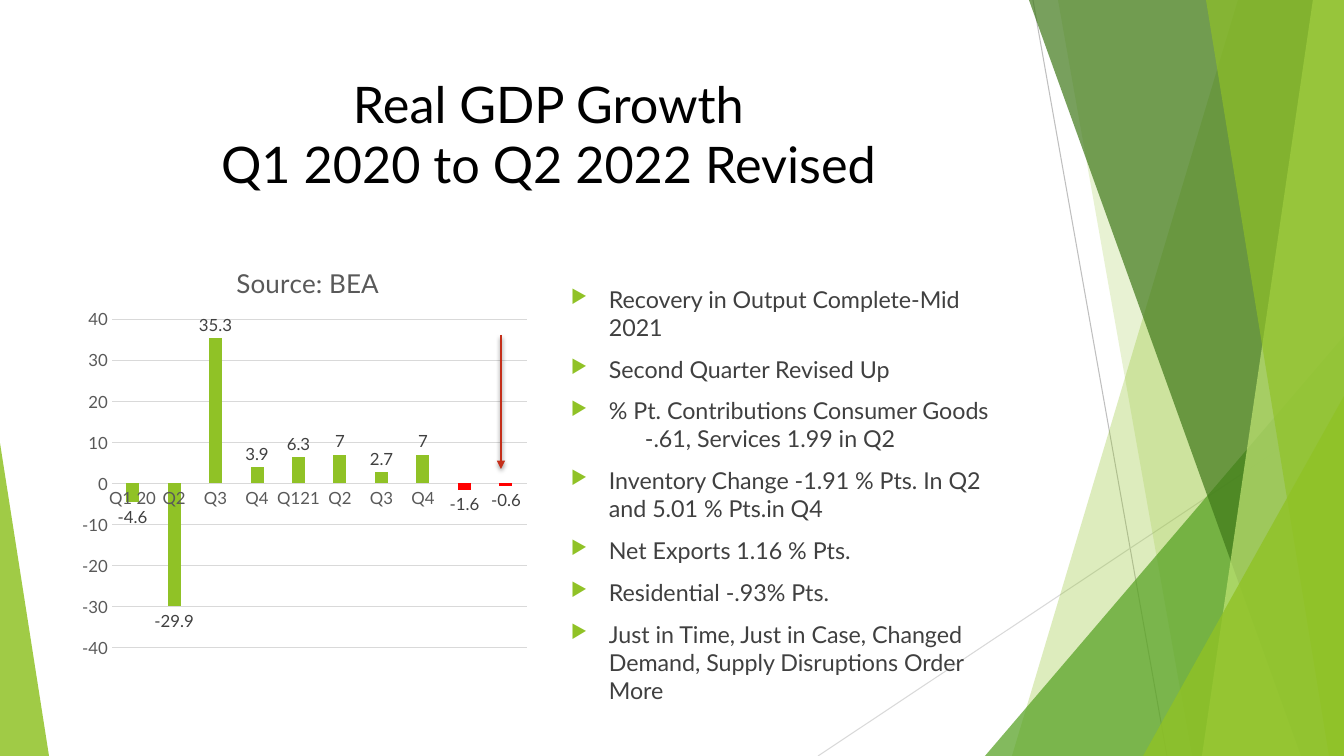
from lxml import etree
from pptx import Presentation
from pptx.chart.data import CategoryChartData
from pptx.dml.color import RGBColor
from pptx.enum.chart import XL_CHART_TYPE, XL_LABEL_POSITION, XL_TICK_MARK
from pptx.enum.shapes import MSO_CONNECTOR, MSO_SHAPE
from pptx.enum.text import MSO_ANCHOR, PP_ALIGN
from pptx.oxml import parse_xml
from pptx.oxml.ns import nsdecls, qn
from pptx.util import Emu, Pt

TRIANGLE = MSO_SHAPE.ISOSCELES_TRIANGLE
STRAIGHT = MSO_CONNECTOR.STRAIGHT
COLUMNS = XL_CHART_TYPE.COLUMN_CLUSTERED
OUTSIDE_END = XL_LABEL_POSITION.OUTSIDE_END
NO_TICK = XL_TICK_MARK.NONE
TOP = MSO_ANCHOR.TOP
LEFT, CENTER = PP_ALIGN.LEFT, PP_ALIGN.CENTER

BLACK = RGBColor(0x00, 0x00, 0x00)
DARK_GRAY = RGBColor(0x40, 0x40, 0x40)
GRAY = RGBColor(0x59, 0x59, 0x59)
SILVER = RGBColor(0xBF, 0xBF, 0xBF)
LIGHT_GRAY = RGBColor(0xD9, 0xD9, 0xD9)
LIME = RGBColor(0x90, 0xC2, 0x26)
PALE_LIME = RGBColor(0xC0, 0xE4, 0x74)
GREEN = RGBColor(0x54, 0xA0, 0x21)
DARK_GREEN = RGBColor(0x3F, 0x78, 0x19)
RED = RGBColor(0xFF, 0x00, 0x00)
BRICK = RGBColor(0xC4, 0x2F, 0x1A)

WIDTH, HEIGHT = 1344, 756
SCALE = 12192000 / WIDTH
FONT = "Lato"

QUARTERS = ["Q1 20", "Q2", "Q3", "Q4", "Q121", "Q2", "Q3", "Q4", "", ""]
GROWTH = [-4.6, -29.9, 35.3, 3.9, 6.3, 7, 2.7, 7, -1.6, -0.6]
BULLETS = [
    ["Recovery in Output Complete-Mid 2021"],
    ["Second Quarter Revised Up"],
    ["% Pt. Contributions Consumer Goods", "-.61, Services 1.99 in Q2"],
    ["Inventory Change -1.91 % Pts. In Q2 and 5.01 % Pts.in Q4"],
    ["Net Exports 1.16 % Pts."],
    ["Residential -.93% Pts."],
    ["Just in Time, Just in Case, Changed Demand, Supply Disruptions Order More"],
]


def px(value):
    """Turn pixels into EMU."""
    return Emu(round(value * SCALE))


class SlideBuilder:
    """Hold the style and the current slide, and add elements to it."""

    def __init__(self, slide, font):
        self.slide = slide
        self.font = font

    def style(self, font, size, color):
        """Apply the shared typeface with a size and colour."""
        for name, value in {"name": self.font, "size": Pt(size), "bold": False}.items():
            setattr(font, name, value)
        font.color.rgb = color

    def paint(self, shape, color, opacity):
        """Give a shape a translucent fill and no outline."""
        shape.shadow.inherit = False
        shape.fill.solid()
        shape.fill.fore_color.rgb = color
        shape.line.fill.background()
        tint = shape.element.spPr.find(".//" + qn("a:srgbClr"))
        etree.SubElement(tint, qn("a:alpha")).set("val", str(opacity * 1000))

    def polygon(self, points, color, opacity):
        """Draw a closed outline."""
        corners = [(px(x), px(y)) for x, y in points]
        builder = self.slide.shapes.build_freeform(*corners[0])
        builder.add_line_segments(corners[1:], close=True)
        self.paint(builder.convert_to_shape(), color, opacity)

    def triangle(self, box, apex, color, opacity):
        """Draw a triangle with its apex at a share of the width."""
        shape = self.slide.shapes.add_shape(TRIANGLE, *map(px, box))
        shape.adjustments[0] = apex
        self.paint(shape, color, opacity)

    def line(self, ends, color, width):
        """Draw a straight line and return its effect list."""
        connector = self.slide.shapes.add_connector(STRAIGHT, *map(px, ends))
        connector.line.color.rgb = color
        connector.line.width = Pt(width)
        return etree.SubElement(connector.element.spPr, qn("a:effectLst"))

    def arrow(self, ends, color, width):
        """Draw a line with an arrowhead and a soft shadow."""
        effects = self.line(ends, color, width)
        outline = effects.getprevious()
        etree.SubElement(outline, qn("a:tailEnd")).set("type", "triangle")
        effects.append(parse_xml(
            f'<a:outerShdw {nsdecls("a")} blurRad="{Pt(3)}" dist="{Pt(2)}" dir="5400000">'
            '<a:srgbClr val="000000"><a:alpha val="35000"/></a:srgbClr></a:outerShdw>'))

    def text(self, box, lines, size, color, alignment):
        """Add a wrapped text box and return its paragraphs."""
        frame = self.slide.shapes.add_textbox(*map(px, box)).text_frame
        for name, value in {"word_wrap": True, "vertical_anchor": TOP}.items():
            setattr(frame, name, value)
        frame.text = "\n".join(lines)
        for paragraph in frame.paragraphs:
            paragraph.alignment = alignment
            for run in paragraph.runs:
                self.style(run.font, size, color)
        return frame.paragraphs

    def bullets(self, box, items, size, color):
        """Add a bulleted list whose continuation lines are indented further."""
        lines = [line for item in items for line in item]
        paragraphs = self.text(box, lines, size, color, LEFT)
        starts = [index == 0 for item in items for index in range(len(item))]
        for index, (paragraph, starts_item) in enumerate(zip(paragraphs, starts)):
            paragraph.space_before = Pt(10 if starts_item and index else 0)
            properties = paragraph._p.get_or_add_pPr()
            properties.set("marL", str(px(38 if starts_item else 74)))
            properties.set("indent", str(px(-38 if starts_item else 0)))
            if starts_item:
                for tag, content in (
                    ("buClr", f'><a:srgbClr val="{LIME}"/></a:buClr>'),
                    ("buSzPct", ' val="80000"/>'),
                    ("buChar", ' char="▶"/>'),
                ):
                    properties.append(parse_xml(f'<a:{tag} {nsdecls("a")}{content}'))

    def place(self, element, index, **shares):
        """Set a manual chart layout from shares of the chart area."""
        for layout in element.findall(qn("c:layout")):
            element.remove(layout)
        target = '<c:layoutTarget val="inner"/>' if "w" in shares else ""
        modes = '<c:xMode val="edge"/><c:yMode val="edge"/>'
        values = "".join(f'<c:{name} val="{share}"/>' for name, share in shares.items())
        element.insert(index, parse_xml(
            f'<c:layout {nsdecls("c")}><c:manualLayout>{target}{modes}{values}'
            '</c:manualLayout></c:layout>'))

    def column_chart(self, box, title, categories, values):
        """Add the growth chart, with its unnamed columns in red."""
        data = CategoryChartData()
        data.categories = categories
        data.add_series("Series 1", values)
        chart = self.slide.shapes.add_chart(COLUMNS, *map(px, box), data).chart
        self.style(chart.font, 10, BLACK)
        chart.has_legend = False
        chart.has_title = True
        heading = chart.chart_title.text_frame
        heading.text = title
        self.style(heading.paragraphs[0].runs[0].font, 18.6, GRAY)
        plot = chart.plots[0]
        self.place(chart.chart_title._element, 1, x=0.34, y=0.05)
        self.place(plot._element.getparent(), 0, x=0.08, y=0.19, w=0.9, h=0.77)
        for axis in (chart.category_axis, chart.value_axis):
            axis.major_tick_mark = axis.minor_tick_mark = NO_TICK
            self.style(axis.tick_labels.font, 12, GRAY)
        scale = {"minimum_scale": -40, "maximum_scale": 40, "major_unit": 10}
        for name, value in scale.items():
            setattr(chart.value_axis, name, value)
        chart.value_axis.format.line.fill.background()
        for line in (chart.category_axis.format.line,
                     chart.value_axis.major_gridlines.format.line):
            line.color.rgb = LIGHT_GRAY
            line.width = Pt(0.75)
        layout = {"gap_width": 219, "overlap": -27, "vary_by_categories": False}
        for name, value in layout.items():
            setattr(plot, name, value)
        series = plot.series[0]
        series.invert_if_negative = False
        fills = [(series.format.fill, LIME)]
        fills += [(series.points[index].format.fill, RED)
                  for index, category in enumerate(categories) if not category]
        for fill, color in fills:
            fill.solid()
            fill.fore_color.rgb = color
        labels = series.data_labels
        for name, value in {"show_value": True, "position": OUTSIDE_END}.items():
            setattr(labels, name, value)
        self.style(labels.font, 12, DARK_GRAY)


def main():
    """Build the slide and save it."""
    presentation = Presentation()
    presentation.slide_width, presentation.slide_height = px(WIDTH), px(HEIGHT)
    builder = SlideBuilder(presentation.slides.add_slide(presentation.slide_layouts[6]), FONT)
    builder.line((1033, 0, 1167, HEIGHT), SILVER, 0.75)
    builder.line((WIDTH, 406, 818, HEIGHT), LIGHT_GRAY, 0.75)

    def band(top, bottom, color, opacity):
        """Fill from a slanted edge to the right side of the slide."""
        corners = [(top, 0), (WIDTH, 0), (WIDTH, HEIGHT), (bottom, HEIGHT)]
        builder.polygon(corners, color, opacity)

    band(1238, 1012, LIME, 30)
    band(1058, 1192, LIME, 20)
    builder.triangle((985, 336, 359, 420), 1, GREEN, 72)
    band(1029, 1301, DARK_GREEN, 70)
    band(1313, 1202, PALE_LIME, 70)
    band(1206, 1329, LIME, 65)
    builder.triangle((1143, 396, 201, 360), 1, LIME, 80)
    builder.triangle((0, 443, 49, 313), 0, LIME, 85)
    title = ["Real GDP Growth", "Q1 2020 to Q2 2022 Revised"]
    builder.text((75, 68, 947, 145), title, 36, BLACK, CENTER)
    builder.column_chart((75, 238, 461, 427), "Source: BEA", QUARTERS, GROWTH)
    builder.bullets((561, 280, 462, 428), BULLETS, 16.6, DARK_GRAY)
    builder.arrow((501, 335, 501, 469), BRICK, 2)
    presentation.save("out.pptx")


if __name__ == "__main__":
    main()
